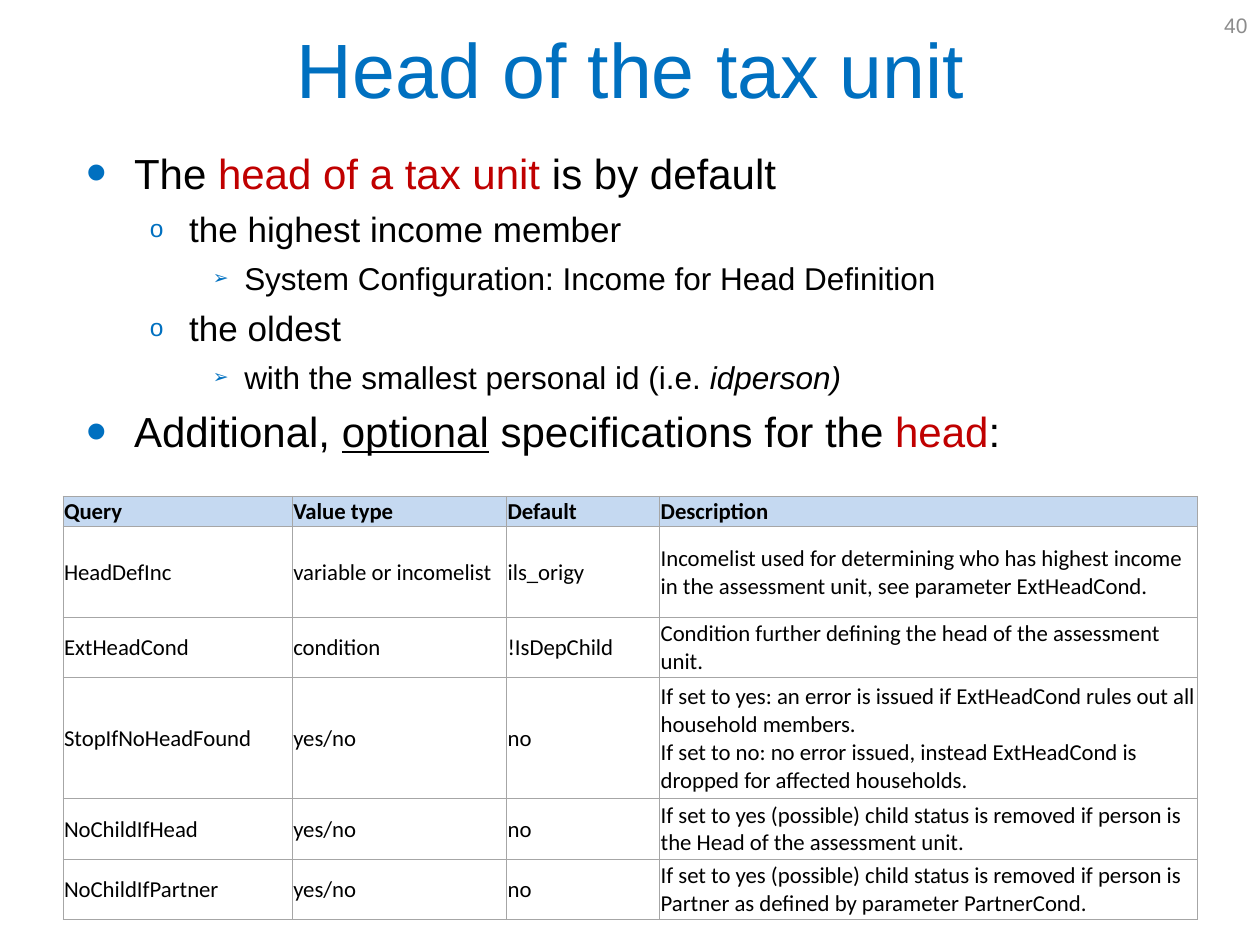
from dataclasses import dataclass

from lxml import etree
from pptx import Presentation
from pptx import util as u
from pptx.dml import color as dml
from pptx.enum import text as t
from pptx.oxml import ns


@dataclass(frozen=True)
class Theme:
    """Colours, fonts and type sizes of the slide."""
    blue: str = "0070C0"
    red: str = "C00000"
    black: str = "000000"
    grey: str = "8C8C8C"
    header: str = "C5D9F1"
    white: str = "FFFFFF"
    rule: str = "A6A6A6"
    font: str = "Arial"
    table_font: str = "Calibri"
    title: int = 44
    number: int = 12
    levels: tuple = (24, 20, 18)
    table: int = 13


THEME = Theme()
RED = {"color": THEME.red}
BULLETS = (("•", 140, 27, 27), ("o", 70, 58.5, 22.5), ("➢", 60, 90, 18))
OUTLINE = (
    (0, [("The ", {}), ("head of a tax unit ", RED), ("is by default", {})]),
    (1, [("the highest income member", {})]),
    (2, [("System Configuration: Income for Head Definition", {})]),
    (1, [("the oldest", {})]),
    (2, [("with the smallest personal id (i.e. ", {}), ("idperson)", {"italic": True})]),
    (0, [("Additional, ", {}), ("optional", {"underline": True}),
         (" specifications for the ", {}), ("head", RED), (":", {})]),
)
COLUMN_WIDTHS = (131, 122.5, 87.5, 307)
ROW_HEIGHTS = (17.28, 51.84, 34.56, 69.12, 34.56, 34.56)
QUERIES = (
    ("Query", "Value type", "Default", "Description"),
    ("HeadDefInc", "variable or incomelist", "ils_origy",
     "Incomelist used for determining who has highest income in the assessment unit, "
     "see parameter ExtHeadCond."),
    ("ExtHeadCond", "condition", "!IsDepChild",
     "Condition further defining the head of the assessment unit."),
    ("StopIfNoHeadFound", "yes/no", "no",
     "If set to yes: an error is issued if ExtHeadCond rules out all household members.\n"
     "If set to no: no error issued, instead ExtHeadCond is dropped for affected households."),
    ("NoChildIfHead", "yes/no", "no",
     "If set to yes (possible) child status is removed if person is "
     "the Head of the assessment unit."),
    ("NoChildIfPartner", "yes/no", "no",
     "If set to yes (possible) child status is removed if person is "
     "Partner as defined by parameter PartnerCond."),
)


def write(paragraph, words, size, color=THEME.black, font=THEME.font, **style):
    """Add formatted text to a paragraph, with a line break at each newline."""
    for index, line in enumerate(words.split("\n")):
        if index:
            paragraph.add_line_break()
        run = paragraph.add_run()
        run.text = line
        run.font.size = u.Pt(size)
        run.font.name = font
        run.font.color.rgb = dml.RGBColor.from_string(color)
        for name, value in style.items():
            setattr(run.font, name, value)


def add_frame(slide, left, top, width, height, anchor=t.MSO_ANCHOR.MIDDLE):
    """Add a wrapping text box and return its text frame."""
    frame = slide.shapes.add_textbox(*map(u.Pt, (left, top, width, height))).text_frame
    frame.word_wrap = True
    frame.vertical_anchor = anchor
    return frame


def add_line(slide, box, words, align, **style):
    """Add a text box holding one aligned line."""
    paragraph = add_frame(slide, *box).paragraphs[0]
    paragraph.alignment = align
    write(paragraph, words, **style)


def add_bullet(paragraph, level):
    """Give a paragraph the bullet and hanging indent of its level."""
    mark, percent, margin, hang = BULLETS[level]
    paragraph.level = level
    properties = paragraph._p.get_or_add_pPr()
    properties.set("marL", str(u.Pt(margin)))
    properties.set("indent", str(-u.Pt(hang)))
    bullet_color = etree.SubElement(properties, ns.qn("a:buClr"))
    etree.SubElement(bullet_color, ns.qn("a:srgbClr"), val=THEME.blue)
    etree.SubElement(properties, ns.qn("a:buSzPct"), val=str(percent * 1000))
    etree.SubElement(properties, ns.qn("a:buFont"), typeface=THEME.font)
    etree.SubElement(properties, ns.qn("a:buChar"), char=mark)


def add_outline(slide):
    """Add the bulleted outline about the head of the unit."""
    frame = add_frame(slide, 42.5, 77.8, 647.3, 192.2, t.MSO_ANCHOR.TOP)
    frame.margin_top = u.Pt(6.5)
    for index, (level, pieces) in enumerate(OUTLINE):
        paragraph = frame.add_paragraph() if index else frame.paragraphs[0]
        add_bullet(paragraph, level)
        if index:
            paragraph.space_before = u.Pt(5.5)
        for words, style in pieces:
            write(paragraph, words, THEME.levels[level], **style)


def add_borders(cell):
    """Draw a thin rule on all four sides of a cell."""
    properties = cell._tc.get_or_add_tcPr()
    for index, side in enumerate("LRTB"):
        border = etree.Element(ns.qn(f"a:ln{side}"), w=str(u.Pt(0.5)))
        fill = etree.SubElement(border, ns.qn("a:solidFill"))
        etree.SubElement(fill, ns.qn("a:srgbClr"), val=THEME.rule)
        properties.insert(index, border)


def fill_cell(cell, words, is_header):
    """Write and format one table cell."""
    cell.margin_left = cell.margin_right = cell.margin_top = u.Pt(0.6)
    cell.margin_bottom = 0
    cell.vertical_anchor = t.MSO_ANCHOR.MIDDLE
    cell.fill.solid()
    cell.fill.fore_color.rgb = dml.RGBColor.from_string(
        THEME.header if is_header else THEME.white)
    add_borders(cell)
    write(cell.text_frame.paragraphs[0], words, THEME.table,
          font=THEME.table_font, bold=is_header)


def add_queries(slide):
    """Add the table of optional specifications."""
    box = (36, 283.6, sum(COLUMN_WIDTHS), sum(ROW_HEIGHTS))
    table = slide.shapes.add_table(
        len(QUERIES), len(COLUMN_WIDTHS), *map(u.Pt, box)).table
    table.horz_banding = False
    for column, width in zip(table.columns, COLUMN_WIDTHS):
        column.width = u.Pt(width)
    for row_index, (row, height) in enumerate(zip(table.rows, ROW_HEIGHTS)):
        row.height = u.Pt(height)
        for cell, words in zip(row.cells, QUERIES[row_index]):
            fill_cell(cell, words, row_index == 0)


def main():
    """Build and save the slide."""
    deck = Presentation()
    deck.slide_width, deck.slide_height = u.Pt(720), u.Pt(540)
    slide = deck.slides.add_slide(deck.slide_layouts[6])
    add_line(slide, (36.7, 5.8, 648, 66.2), "Head of the tax unit",
             t.PP_ALIGN.CENTER, size=THEME.title, color=THEME.blue)
    add_line(slide, (552.2, 0, 167.8, 28.8), "40",
             t.PP_ALIGN.RIGHT, size=THEME.number, color=THEME.grey)
    add_outline(slide)
    add_queries(slide)
    deck.save("out.pptx")


if __name__ == "__main__":
    main()
